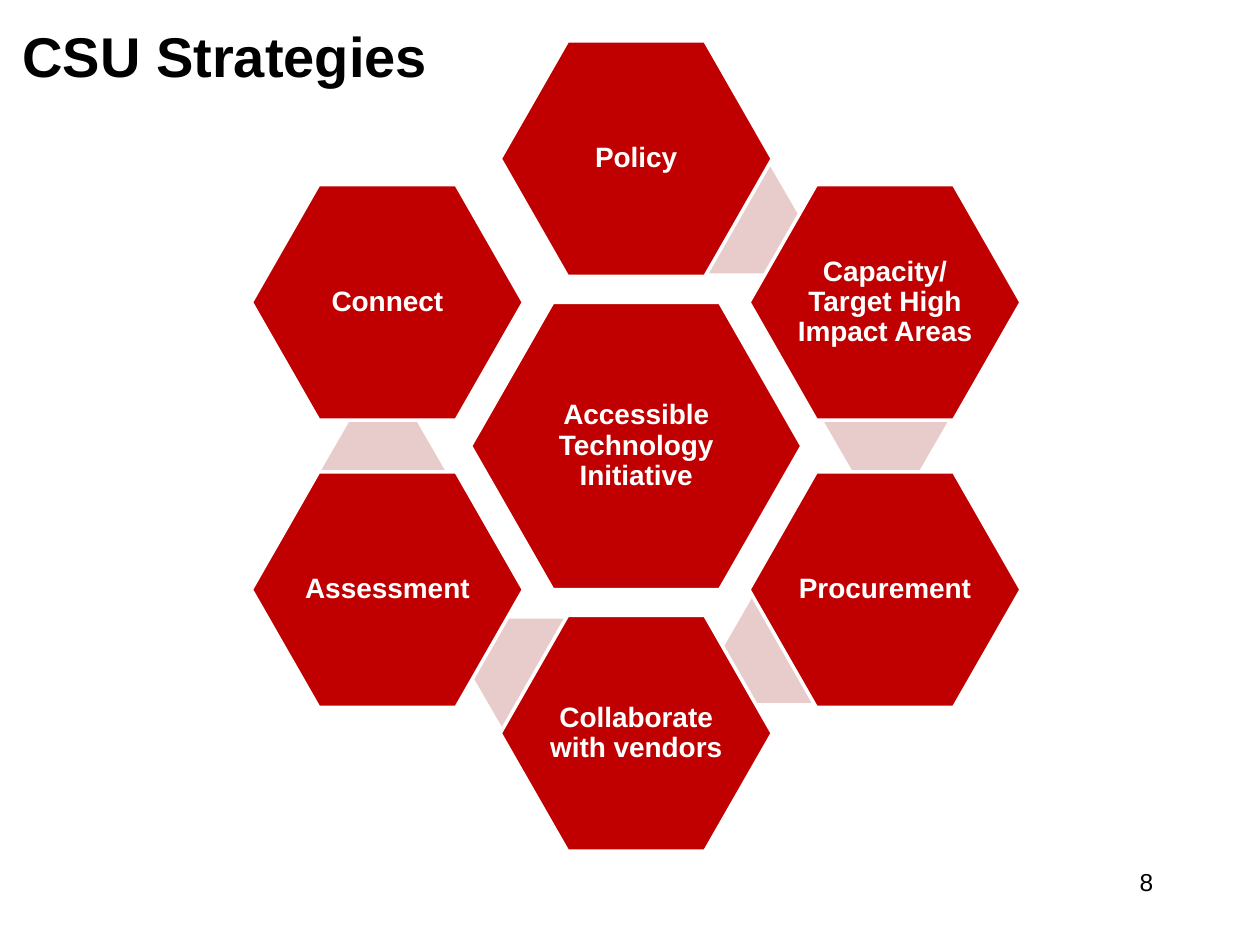
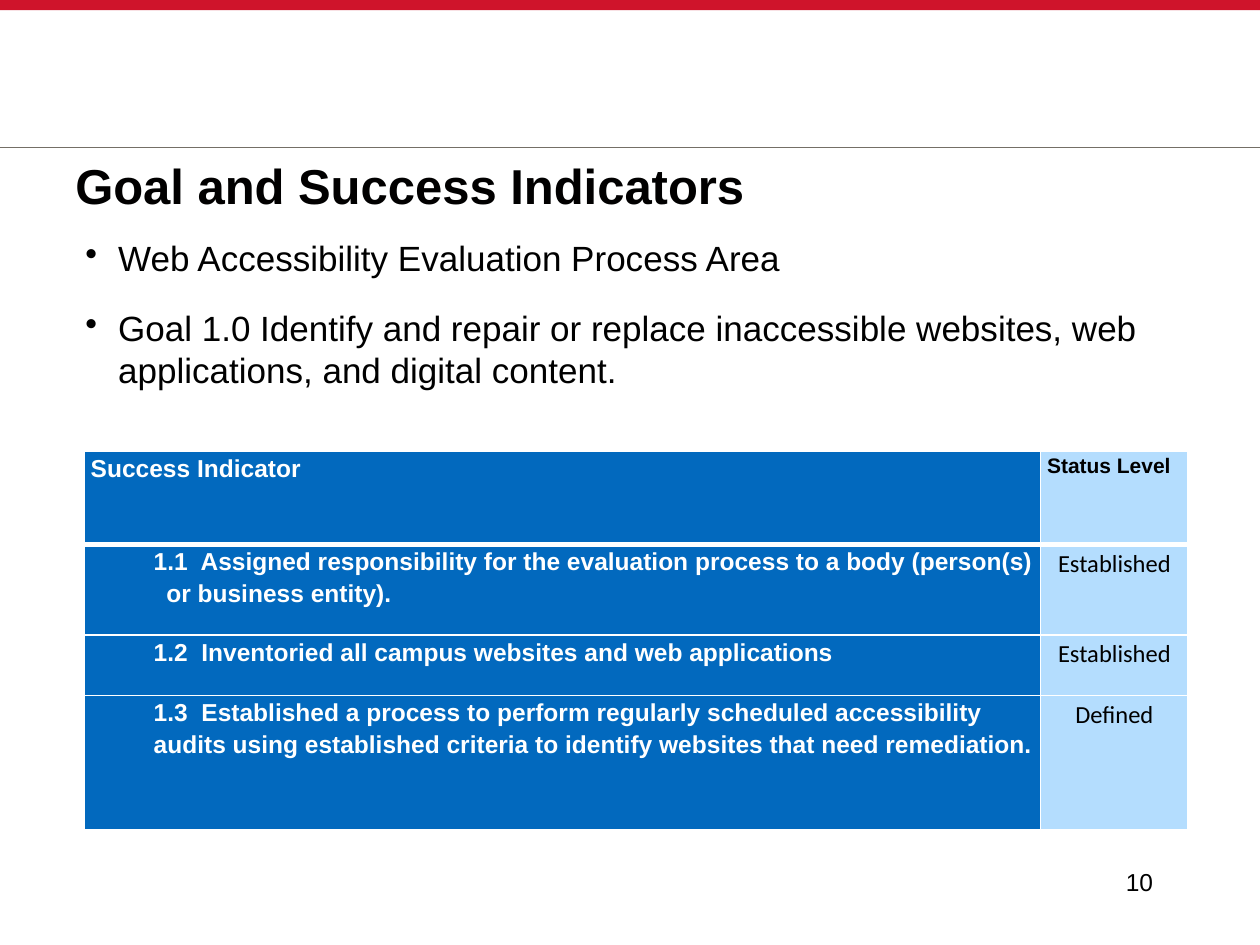
import math
from lxml import etree
from pptx import Presentation
from pptx import util as u
from pptx.dml import color
from pptx.enum import shapes, text
from pptx.oxml import ns

INK = {
    "text": "000000", "title": "010000", "white": "FFFFFF",
    "hex": "C00000", "link": "E8CCCC", "band": "CF142B",
    "rule": "746F66", "blue": "0269BE", "sky": "B4DDFE",
}
ALIGN = text.PP_ALIGN
ANCHOR = text.MSO_ANCHOR
HUB = (5.05, 3.54)
RING = ["Policy", "Capacity/ Target High Impact Areas", "Procurement",
        "Collaborate with vendors", "Assessment", "Connect"]
LINKS = [(5.86, 1.74), (7.03, 3.34), (6.23, 5.15), (4.23, 5.34), (3.04, 3.74)]
GOALS = [
    "Web Accessibility Evaluation Process Area",
    "Goal 1.0 Identify and repair or replace inaccessible websites, web "
    "applications, and digital content.",
]
ITEMS = [
    ("1.1  Assigned responsibility for the evaluation process to a body "
     "(person(s) or business entity).", "Established", 0.1),
    ("1.2  Inventoried all campus websites and web applications",
     "Established", 0),
    ("1.3  Established a process to perform regularly scheduled accessibility "
     "audits using established criteria to identify websites that need "
     "remediation.", "Defined", 0),
]


def tint(name):
    return color.RGBColor.from_string(INK[name])


def paint(fill, name):
    fill.solid()
    fill.fore_color.rgb = tint(name)


def write(para, words, size, ink="text", bold=False, font="Arial", align=None):
    run = para.add_run()
    run.text = words
    run.font.size = u.Pt(size)
    run.font.name = font
    run.font.bold = bold
    run.font.color.rgb = tint(ink)
    para.alignment = align


def add_box(slide, left, top, width, height, anchor=ANCHOR.TOP):
    box = slide.shapes.add_textbox(*map(u.Inches, (left, top, width, height)))
    frame = box.text_frame
    frame.word_wrap = True
    frame.vertical_anchor = anchor
    return frame


def add_title(slide, words, left, top, size):
    frame = add_box(slide, left, top, 9, 0.5, ANCHOR.BOTTOM)
    write(frame.paragraphs[0], words, size, "title", True)


def add_number(slide, number):
    frame = add_box(slide, 7.17, 6.83, 2.08, 0.5)
    write(frame.paragraphs[0], number, 14, align=ALIGN.RIGHT)


def add_shape(slide, kind, left, top, width, height, ink):
    shape = slide.shapes.add_shape(
        kind, *map(u.Inches, (left, top, width, height)))
    shape.shadow.inherit = False
    paint(shape.fill, ink)
    shape.line.fill.background()
    return shape


def add_hex(slide, mid, width, height, ink, slant):
    shape = add_shape(slide, shapes.MSO_SHAPE.HEXAGON, mid[0] - width / 2,
                      mid[1] - height / 2, width, height, ink)
    shape.adjustments[0] = slant
    shape.adjustments[1] = 1.1547
    return shape


def add_node(slide, mid, width, height, words):
    shape = add_hex(slide, mid, width, height, "hex", 0.286)
    paint(shape.line.fill, "white")
    shape.line.width = u.Pt(2)
    frame = shape.text_frame
    frame.word_wrap = True
    frame.vertical_anchor = ANCHOR.MIDDLE
    frame.margin_left = frame.margin_right = u.Inches(0.02)
    frame.margin_top = frame.margin_bottom = u.Inches(0.02)
    para = frame.paragraphs[0]
    para.line_spacing = 0.9
    write(para, words, 16, "white", True, align=ALIGN.CENTER)


def add_rule(slide, top):
    rule = slide.shapes.add_connector(
        shapes.MSO_CONNECTOR.STRAIGHT, 0, u.Inches(top),
        u.Inches(10), u.Inches(top))
    rule.line.color.rgb = tint("rule")
    rule.line.width = u.Pt(0.75)
    etree.SubElement(rule.element.spPr, ns.qn("a:effectLst"))


def indent(para, left, first):
    props = para._p.get_or_add_pPr()
    props.set("marL", str(u.Inches(left)))
    props.set("indent", str(u.Inches(first)))
    return props


def add_goals(slide):
    frame = add_box(slide, 0.58, 1.83, 9, 1.42)
    for i, words in enumerate(GOALS):
        para = frame.add_paragraph() if i else frame.paragraphs[0]
        props = indent(para, 0.26, -0.26)
        etree.SubElement(props, ns.qn("a:buChar"), char="•")
        para.space_before = u.Pt(4 if i else 0)
        para.space_after = u.Pt(12)
        write(para, words, 20)


def edge(cell, side, points):
    line = etree.SubElement(cell._tc.get_or_add_tcPr(), ns.qn("a:ln" + side),
                            w=str(u.Pt(points)))
    fill = etree.SubElement(line, ns.qn("a:solidFill"))
    etree.SubElement(fill, ns.qn("a:srgbClr"), val=INK["white"])


def style(cell, row, ink):
    cell.margin_left = cell.margin_right = u.Inches(0.05)
    cell.margin_top = cell.margin_bottom = 0
    for side in "LRTB":
        thick = (row, side) in ((0, "B"), (1, "T"))
        edge(cell, side, 3 if thick else 1)
    paint(cell.fill, ink)
    para = cell.text_frame.paragraphs[0]
    para.line_spacing = 1.15
    return para


def add_grid(slide):
    cols, rows = [7.59, 1.17], [0.74, 0.72, 0.48, 1.07]
    grid = slide.shapes.add_table(
        len(rows), len(cols), u.Inches(0.67), u.Inches(3.58),
        u.Inches(sum(cols)), u.Inches(sum(rows))).table
    grid.horz_banding = False
    for col, width in zip(grid.columns, cols):
        col.width = u.Inches(width)
    for row, height in zip(grid.rows, rows):
        row.height = u.Inches(height)
    write(style(grid.cell(0, 0), 0, "blue"), "Success Indicator", 14,
          "white", True)
    write(style(grid.cell(0, 1), 0, "sky"), "Status Level", 12, bold=True)
    for i, (words, level, hang) in enumerate(ITEMS, 1):
        para = style(grid.cell(i, 0), i, "blue")
        indent(para, 0.5 + hang, -hang)
        write(para, words, 14, "white", True)
        write(style(grid.cell(i, 1), i, "sky"), level, 14, font="Calibri",
              align=ALIGN.CENTER)


def draw_ring(slide):
    for mid in LINKS:
        add_hex(slide, mid, 0.99, 0.86, "link", 0.289)
    add_node(slide, HUB, 2.63, 2.28, "Accessible Technology Initiative")
    for i, words in enumerate(RING):
        turn = math.radians(60 * i)
        mid = (HUB[0] + 2.28 * math.sin(turn), HUB[1] - 2.28 * math.cos(turn))
        add_node(slide, mid, 2.16, 1.87, words)
    add_number(slide, "8")
    add_title(slide, "CSU Strategies", 0.08, 0.25, 32)


def draw_goals(slide):
    add_shape(slide, shapes.MSO_SHAPE.RECTANGLE, 0, 0, 10, 0.08, "band")
    add_rule(slide, 1.17)
    add_title(slide, "Goal and Success Indicators", 0.5, 1.25, 28)
    add_goals(slide)
    add_number(slide, "10")
    add_grid(slide)


def main():
    deck = Presentation()
    deck.slide_width, deck.slide_height = u.Inches(10), u.Inches(7.5)
    for draw in (draw_ring, draw_goals):
        draw(deck.slides.add_slide(deck.slide_layouts[6]))
    deck.save("out.pptx")


if __name__ == "__main__":
    main()
